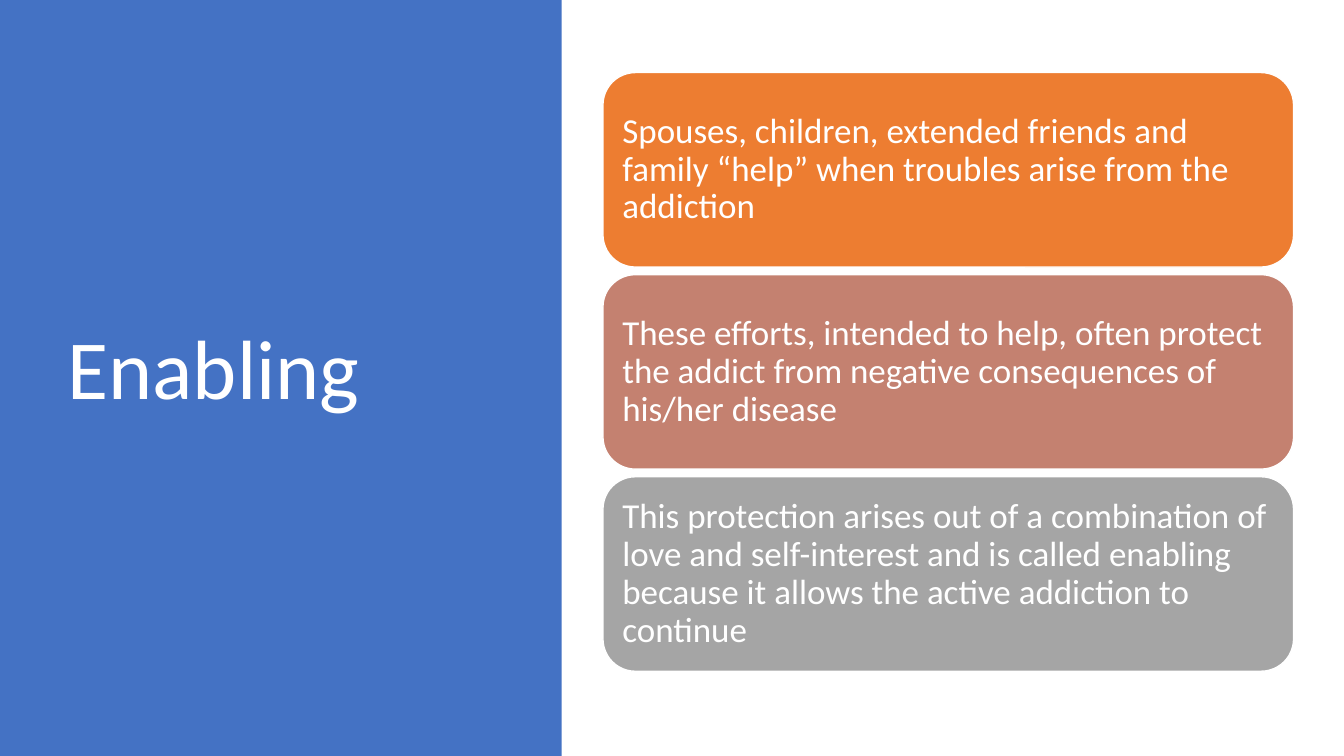
import pptx
import pptx.util
import pptx.dml.color
import pptx.enum.shapes
import pptx.enum.text

WIDTH, HEIGHT = 13.33, 7.5
CARDS = [
    ("ED7D31", "Spouses, children, extended friends and family “help” when troubles arise from the addiction"),
    ("C48170", "These efforts, intended to help, often protect the addict from negative consequences of his/her disease"),
    ("A5A5A5", "This protection arises out of a combination of love and self-interest and is called enabling "
               "because it allows the active addiction to continue"),
]


def paint(target, color):
    if hasattr(target, "solid"):
        target.solid()
        target = target.fore_color
    target.rgb = pptx.dml.color.RGBColor.from_string(color)


def write(box, text, size=25, font="Calibri", color="FFFFFF", inset=0.1):
    frame = box.text_frame
    frame.word_wrap = True
    frame.auto_size = pptx.enum.text.MSO_AUTO_SIZE.NONE
    frame.vertical_anchor = pptx.enum.text.MSO_ANCHOR.MIDDLE
    frame.margin_left = frame.margin_right = pptx.util.Inches(inset)
    frame.margin_top = frame.margin_bottom = pptx.util.Inches(inset)
    para = frame.paragraphs[0]
    para.alignment = pptx.enum.text.PP_ALIGN.LEFT
    para.line_spacing = 0.9
    span = para.add_run()
    span.text = text
    span.font.size = pptx.util.Pt(size)
    span.font.name = font
    paint(span.font.color, color)


class SlideBuilder:
    panel_color = "4472C4"
    outline_color = "FFFFFF"

    def __init__(self, deck):
        self.page = deck.slides.add_slide(deck.slide_layouts[5])

    def area(self, left, top, width, height):
        return [pptx.util.Inches(share * side) for share, side in
                zip((left, top, width, height), (WIDTH, HEIGHT, WIDTH, HEIGHT))]

    def shape(self, kind, area, color):
        box = self.page.shapes.add_shape(kind, *self.area(*area))
        box.shadow.inherit = False
        paint(box.fill, color)
        box.line.fill.background()
        return box

    def panel(self, *area):
        box = self.shape(pptx.enum.shapes.MSO_SHAPE.RECTANGLE, area, self.panel_color)
        self.page.shapes.title.element.addprevious(box.element)

    def title(self, text, *area):
        box = self.page.shapes.title
        box.left, box.top, box.width, box.height = self.area(*area)
        write(box, text, size=60)

    def card(self, text, color, *area):
        box = self.shape(pptx.enum.shapes.MSO_SHAPE.ROUNDED_RECTANGLE, area, color)
        paint(box.line.fill, self.outline_color)
        box.line.width = pptx.util.Pt(1)
        write(box, text)


def main():
    deck = pptx.Presentation()
    deck.slide_width = pptx.util.Inches(WIDTH)
    deck.slide_height = pptx.util.Inches(HEIGHT)
    builder = SlideBuilder(deck)
    builder.panel(0, 0, 5.57 / WIDTH, 1)
    builder.title("Enabling", 0.57 / WIDTH, 0.68 / HEIGHT, 4.16 / WIDTH, 6.02 / HEIGHT)
    top, pitch = 0.72 / HEIGHT, 2.005 / HEIGHT
    for row, (color, text) in enumerate(CARDS):
        builder.card(text, color, 5.98 / WIDTH, top + row * pitch, 6.85 / WIDTH, 1.93 / HEIGHT)
    deck.save("out.pptx")


if __name__ == "__main__":
    main()
